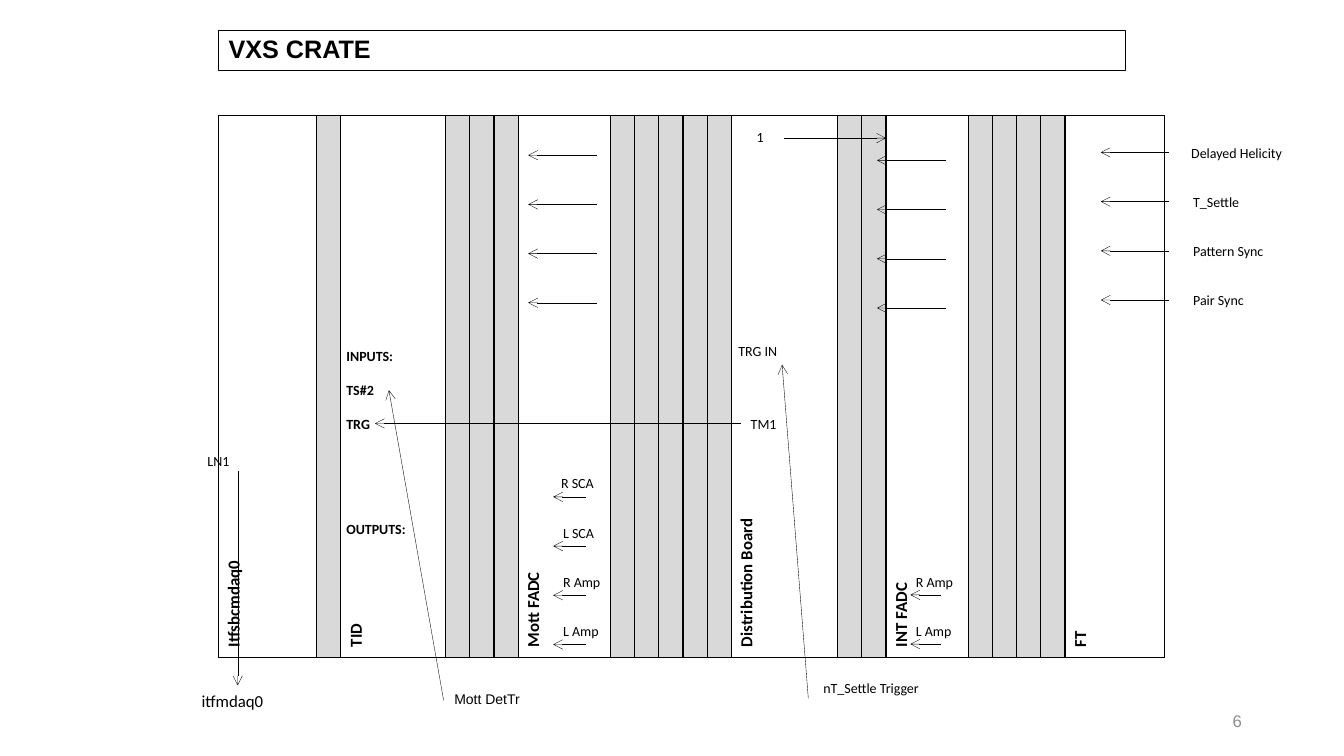
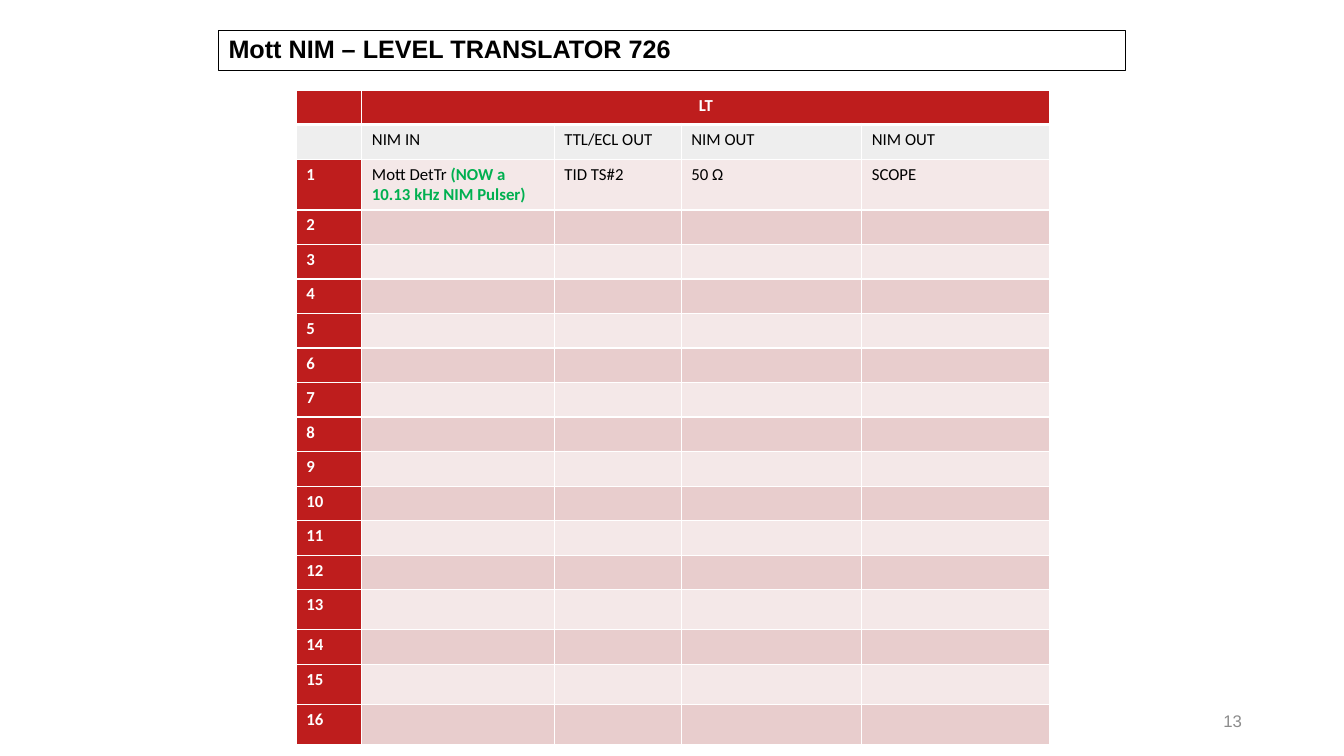
import pptx
import pptx.util
import pptx.dml.color
import pptx.enum.shapes
import pptx.enum.text
import pptx.oxml.ns
from lxml import etree

Cm = pptx.util.Cm
Pt = pptx.util.Pt
RGBColor = pptx.dml.color.RGBColor
ALIGN = pptx.enum.text.PP_ALIGN
ANCHOR = pptx.enum.text.MSO_ANCHOR
qn = pptx.oxml.ns.qn

BLACK = RGBColor(0x00, 0x00, 0x00)
WHITE = RGBColor(0xFF, 0xFF, 0xFF)
SLOT_GREY = RGBColor(0xD9, 0xD9, 0xD9)
NUMBER_GREY = RGBColor(0x8C, 0x8C, 0x8C)
RED = RGBColor(0xBE, 0x1D, 0x1D)
HEADING_GREY = RGBColor(0xEE, 0xEE, 0xEE)
PALE_PINK = RGBColor(0xF4, 0xE8, 0xE8)
PINK = RGBColor(0xE8, 0xCD, 0xCD)
GREEN = RGBColor(0x00, 0xB0, 0x50)

HEADING_FONT = "Arial"
BODY_FONT = "Calibri"
THIN = Pt(0.25)
CHANNEL_GAP = 1.24
SLOT_WIDTH = 0.61

CRATE_MODULES = [
    ("Itfsbcmdaq0", 2.47, 1),
    ("TID", 2.64, 3),
    ("Mott FADC", 2.32, 5),
    ("Distribution Board", 2.68, 2),
    ("INT FADC", 2.07, 4),
    ("FT", 2.5, 0),
]
ARROW_STACKS = [
    (29.46, 27.74, 3.84, 4),
    (23.83, 22.1, 4.04, 4),
    (15.04, 13.31, 3.91, 4),
    (14.76, 13.94, 12.52, 4),
    (23.72, 22.94, 14.99, 2),
]
LABEL_STACKS = [
    (3.51, [("Delayed Helicity", 29.77), ("T_Settle", 29.82),
            ("Pattern Sync", 29.82), ("Pair Sync", 29.82)]),
    (11.84, [("R SCA", 13.89), ("L SCA", 13.94),
             ("R Amp", 13.94), ("L Amp", 13.94)]),
    (14.33, [("R Amp", 22.83), ("L Amp", 22.83)]),
]
SIGNAL_ARROWS = [
    ((5.99, 11.86), (5.99, 17.27)),
    ((18.67, 10.67), (9.45, 10.67)),
    ((19.76, 3.48), (22.33, 3.48)),
    ((11.18, 17.65), (9.8, 9.83)),
    ((20.37, 17.6), (19.71, 9.19)),
]
SIGNAL_LABELS = [
    ("1", 18.82, 3.12),
    ("LN1", 4.98, 11.28),
    ("TM1", 18.67, 10.34),
    ("TRG IN", 18.36, 8.51),
    ("nT_Settle Trigger", 20.5, 16.99),
]
TRANSLATOR_HEADINGS = ["NIM IN", "TTL/ECL OUT", "NIM OUT", "NIM OUT"]
TRANSLATOR_OUTPUTS = ["TID TS#2", "50 Ω", "SCOPE"]
TRANSLATOR_COLUMNS = [1.65, 4.85, 3.2, 4.55, 4.74]
CHANNELS = 16
ROW_HEIGHT = 0.87
TALL_ROWS = {1: 1.28, 13: 1.01, 15: 1.01, 16: 1.01}


def format_span(span, size, color=BLACK, bold=False, font=BODY_FONT):
    span.font.name = font
    span.font.size = Pt(size)
    span.font.bold = bold
    span.font.color.rgb = color


def format_frame(frame, **style):
    for para in frame.paragraphs:
        for span in para.runs:
            format_span(span, **style)


def add_title(page, text):
    box = page.shapes.add_shape(pptx.enum.shapes.MSO_SHAPE.RECTANGLE,
                                Cm(5.51), Cm(0.76), Cm(22.86), Cm(1))
    box.shadow.inherit = False
    box.fill.background()
    box.line.color.rgb = BLACK
    box.line.width = THIN
    frame = box.text_frame
    frame.text = text
    frame.word_wrap = True
    frame.vertical_anchor = ANCHOR.MIDDLE
    frame.paragraphs[0].alignment = ALIGN.LEFT
    frame.paragraphs[0].line_spacing = 0.9
    format_frame(frame, size=18, bold=True, font=HEADING_FONT)


def add_label(page, text, left, top, width=3.43, height=0.69, size=10, **style):
    box = page.shapes.add_textbox(Cm(left), Cm(top), Cm(width), Cm(height))
    frame = box.text_frame
    frame.text = text
    frame.word_wrap = True
    format_frame(frame, size=size, **style)
    return frame


def add_page_number(page, number):
    frame = add_label(page, str(number), 23.93, 17.65, 7.62, 1.02, 12,
                      color=NUMBER_GREY, font=HEADING_FONT)
    frame.vertical_anchor = ANCHOR.MIDDLE
    frame.paragraphs[0].alignment = ALIGN.RIGHT


def add_arrow(page, start, end):
    arrow = page.shapes.add_connector(
        pptx.enum.shapes.MSO_CONNECTOR.STRAIGHT,
        *(Cm(value) for value in (*start, *end)))
    arrow.line.color.rgb = BLACK
    arrow.line.width = THIN
    outline = arrow.line._get_or_add_ln()
    etree.SubElement(outline, qn("a:tailEnd")).set("type", "arrow")
    etree.SubElement(arrow._element.spPr, qn("a:effectLst"))


def add_grid(page, left, top, widths, heights):
    frame = page.shapes.add_table(len(heights), len(widths), Cm(left), Cm(top),
                                  Cm(sum(widths)), Cm(sum(heights)))
    grid = frame.table
    grid.first_row = False
    grid.horz_banding = False
    for column, width in zip(grid.columns, widths):
        column.width = Cm(width)
    for row, height in zip(grid.rows, heights):
        row.height = Cm(height)
    return grid


def set_borders(cell, color, top=1, bottom=1):
    properties = cell._tc.get_or_add_tcPr()
    for side, width in (("L", 1), ("R", 1), ("T", top), ("B", bottom)):
        border = etree.SubElement(properties, qn(f"a:ln{side}"), w=str(Pt(width)))
        fill = etree.SubElement(border, qn("a:solidFill"))
        etree.SubElement(fill, qn("a:srgbClr"), val=str(color))


def fill_cell(cell, color):
    if color is None:
        cell.fill.background()
    else:
        cell.fill.solid()
        cell.fill.fore_color.rgb = color


def write_cell(cell, text, **style):
    cell.text = text
    if text:
        format_frame(cell.text_frame, size=12, **style)
    else:
        para = cell.text_frame.paragraphs[0]
        etree.SubElement(para._p, qn("a:endParaRPr"), sz="1200")


def add_crate(page):
    slots = []
    for name, width, spares in CRATE_MODULES:
        slots += [(name, width)] + [("", SLOT_WIDTH)] * spares
    crate = add_grid(page, 5.51, 2.92, [width for name, width in slots], [13.64])
    for column, (name, width) in enumerate(slots):
        cell = crate.cell(0, column)
        set_borders(cell, BLACK)
        fill_cell(cell, None if name else SLOT_GREY)
        write_cell(cell, name, bold=True)
        if name:
            cell._tc.get_or_add_tcPr().set("vert", "vert270")


def translator_cell(row, column):
    channel = row - 1
    if row == 0:
        return ("LT" if column == 1 else ""), RED, WHITE, True
    if row == 1:
        return ["", *TRANSLATOR_HEADINGS][column], HEADING_GREY, BLACK, False
    if column == 0:
        return str(channel), RED, WHITE, True
    texts = ["Mott DetTr ", *TRANSLATOR_OUTPUTS] if channel == 1 else [""] * 4
    return texts[column - 1], PALE_PINK if channel % 2 else PINK, BLACK, False


def add_translator(page):
    heights = [ROW_HEIGHT] * 2
    heights += [TALL_ROWS.get(channel, ROW_HEIGHT) for channel in range(1, CHANNELS + 1)]
    grid = add_grid(page, 7.47, 2.27, TRANSLATOR_COLUMNS, heights)
    for row in range(len(heights)):
        for column in range(len(TRANSLATOR_COLUMNS)):
            cell = grid.cell(row, column)
            text, fill, color, bold = translator_cell(row, column)
            set_borders(cell, WHITE, top=3 if row == 1 else 1,
                        bottom=3 if row == 0 else 1)
            fill_cell(cell, fill)
            write_cell(cell, text, color=color, bold=bold)
    grid.cell(0, 1).merge(grid.cell(0, 4))
    grid.cell(0, 1).text_frame.paragraphs[0].alignment = ALIGN.CENTER
    span = grid.cell(2, 1).text_frame.paragraphs[0].add_run()
    span.text = "(NOW a 10.13 kHz NIM Pulser)"
    format_span(span, 12, GREEN, True)


def add_page(deck, title, number):
    page = deck.slides.add_slide(deck.slide_layouts[6])
    add_title(page, title)
    add_page_number(page, number)
    return page


def build_crate_page(deck):
    page = add_page(deck, "VXS CRATE", 6)
    add_crate(page)
    for start, end in SIGNAL_ARROWS:
        add_arrow(page, start, end)
    for start, end, top, count in ARROW_STACKS:
        for step in range(count):
            level = top + step * CHANNEL_GAP
            add_arrow(page, (start, level), (end, level))
    for top, labels in LABEL_STACKS:
        for step, (text, left) in enumerate(labels):
            add_label(page, text, left, top + step * CHANNEL_GAP)
    for text, left, top in SIGNAL_LABELS:
        add_label(page, text, left, top)
    add_label(page, "itfmdaq0", 4.83, 17.27, height=0.76, size=12)
    add_label(page, "Mott DetTr", 11.2, 17.27, font=HEADING_FONT)
    add_label(page, "OUTPUTS:", 8.48, 13, bold=True)
    inputs = add_label(page, "INPUTS:\nTS#2\nTRG", 8.48, 8.64, height=2.39, bold=True)
    for para in inputs.paragraphs[1:]:
        para.space_before = Pt(12)


def build_translator_page(deck):
    page = add_page(deck, "Mott NIM – LEVEL TRANSLATOR 726", 13)
    add_translator(page)


def main():
    deck = pptx.Presentation()
    deck.slide_width = Cm(33.87)
    deck.slide_height = Cm(19.05)
    build_crate_page(deck)
    build_translator_page(deck)
    deck.save("out.pptx")


if __name__ == "__main__":
    main()
